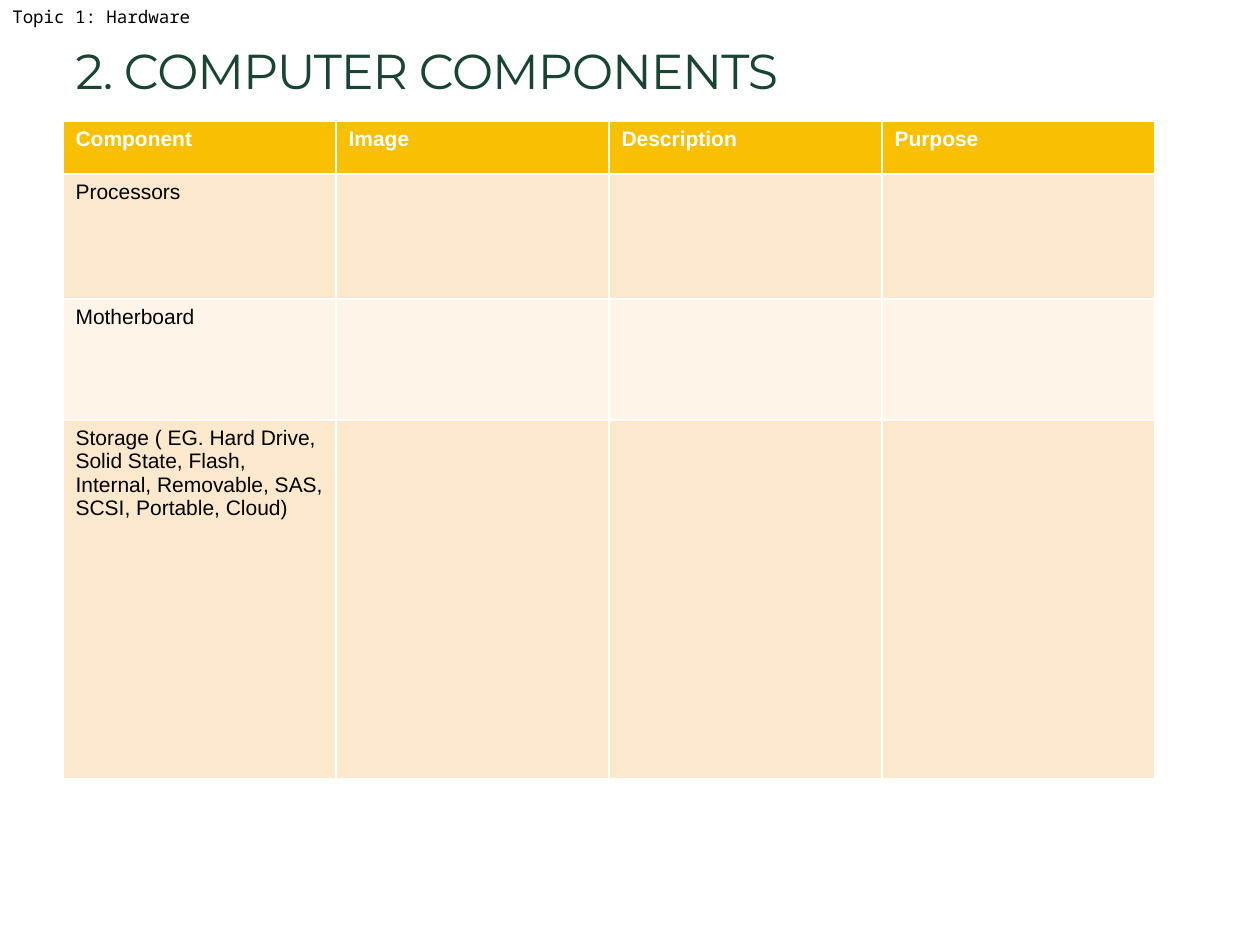
from pptx import Presentation
from pptx.dml.color import RGBColor
from pptx.enum.text import MSO_ANCHOR, MSO_AUTO_SIZE, PP_ALIGN
from pptx.util import Pt

TOPIC = "Topic 1: Hardware"
TITLE = "2. COMPUTER COMPONENTS"
HEADINGS = ["Component", "Image", "Description", "Purpose"]
COMPONENTS = [
    ("Processors", 125),
    ("Motherboard", 121),
    ("Storage ( EG. Hard Drive, Solid State, Flash, Internal, Removable, "
     "SAS, SCSI, Portable, Cloud)", 359),
]
HEADING_HEIGHT = 53
COLUMN_WIDTH = 273
HEADING_FILL = "F8C000"
BAND_FILLS = ["FCE8CC", "FEF4E7"]

PX = 914400 // 126


def px(*lengths):
    return [length * PX for length in lengths]


def color(hex_code):
    return RGBColor.from_string(hex_code)


def style(paragraph, face, size, hex_code, bold=False):
    font = paragraph.font
    font.name, font.size, font.bold = face, Pt(size), bold
    font.color.rgb = color(hex_code)


def fill_cell(cell, text, fill, text_color, bold):
    cell.fill.solid()
    cell.fill.fore_color.rgb = color(fill)
    cell.text = text
    style(cell.text_frame.paragraphs[0], "Arial", 12, text_color, bold)


prs = Presentation()
prs.slide_width, prs.slide_height = px(1260, 945)
slide = prs.slides.add_slide(prs.slide_layouts[5])

topic = slide.shapes.add_textbox(*px(0, 0, 205, 34)).text_frame
topic.word_wrap = False
topic.auto_size = MSO_AUTO_SIZE.SHAPE_TO_FIT_TEXT
topic.text = TOPIC
style(topic.paragraphs[0], "Noto Sans Mono", 10, "000000")

title = slide.shapes.title
title.left, title.top, title.width, title.height = px(63, -63, 798, 169)
title.text_frame.text = TITLE
title.text_frame.vertical_anchor = MSO_ANCHOR.BOTTOM
title.text_frame.auto_size = MSO_AUTO_SIZE.NONE
heading = title.text_frame.paragraphs[0]
heading.alignment = PP_ALIGN.LEFT
style(heading, "Montserrat", 28, "194431")
heading.runs[0].font._element.set("spc", "-60")

heights = [HEADING_HEIGHT] + [height for _, height in COMPONENTS]
table = slide.shapes.add_table(
    len(heights), len(HEADINGS),
    *px(63, 121, COLUMN_WIDTH * len(HEADINGS), sum(heights))).table
for column in table.columns:
    column.width = COLUMN_WIDTH * PX
for row, height in zip(table.rows, heights):
    row.height = height * PX

for col, text in enumerate(HEADINGS):
    fill_cell(table.cell(0, col), text, HEADING_FILL, "FFFFFF", True)
    for row, (component, _) in enumerate(COMPONENTS):
        fill_cell(table.cell(row + 1, col), component if col == 0 else "",
                  BAND_FILLS[row % 2], "000000", False)

prs.save("out.pptx")
